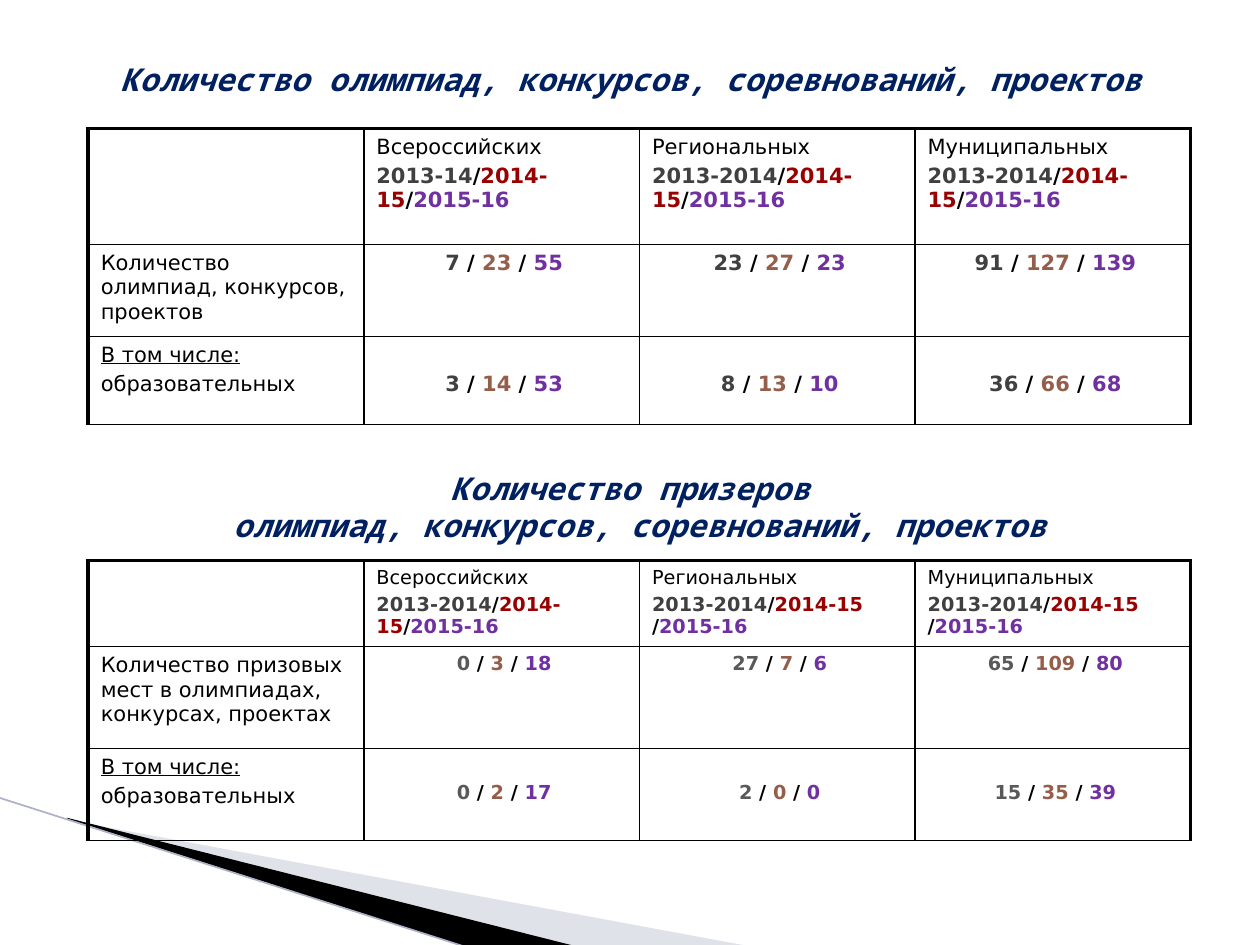
"""Build a slide with two tables of olympiad and prize-winner counts."""
from pptx import Presentation
from pptx.dml.color import RGBColor as RGB
from pptx.enum.shapes import MSO_CONNECTOR as CONN
from pptx.enum.text import MSO_ANCHOR as ANCHOR, PP_ALIGN as ALIGN
from pptx.oxml.ns import qn
from pptx.util import Inches, Pt
from lxml.etree import SubElement

THEME = {
    "head_font": "Noto Sans Mono", "body_font": "DejaVu Sans",
    "head_size": 18, "label_size": 12,
    "navy": "002060", "black": "000000", "year1": "404040", "year2": "990000",
    "value2": "955E4B", "purple": "7030A0", "wedge": "B3B7CB", "edge": "ACB1C6",
    "thick": 2.25, "thin": 1,
}
TITLE = "Количество олимпиад, конкурсов, соревнований, проектов"
SUBTITLE = "Количество призеров \nолимпиад, конкурсов, соревнований, проектов"
LEVELS = ["Всероссийских", "Региональных", "Муниципальных"]
INCLUDING = ("В том числе:", "образовательных")
TABLES = [
    {"top": 1.02, "rows": [0.92, 0.73, 0.7], "size": 12, "value1": "404040", "drop": 0.28,
     "years": [("2013-14", "2014-15", "2015-16")] + [("2013-2014", "2014-15", "2015-16")] * 2,
     "label": "Количество олимпиад, конкурсов, проектов",
     "totals": [(7, 23, 55), (23, 27, 23), (91, 127, 139)],
     "educational": [(3, 14, 53), (8, 13, 10), (36, 66, 68)]},
    {"top": 4.45, "rows": [0.68, 0.81, 0.73], "size": 11, "value1": "595959", "drop": 0.26,
     "years": [("2013-2014", "2014-15", "2015-16")] + [("2013-2014", "2014-15 ", "2015-16")] * 2,
     "label": "Количество призовых мест в олимпиадах, конкурсах, проектах",
     "totals": [(0, 3, 18), (27, 7, 6), (65, 109, 80)],
     "educational": [(0, 2, 17), (2, 0, 0), (15, 35, 39)]},
]
WEDGES = [
    ([(0.55, 6.51), (5.95, 7.51), (4.56, 7.51), (0.55, 6.5)], THEME["wedge"], 40),
    ([(0.53, 6.49), (4.57, 7.51), (3.72, 7.52), (0.54, 6.5)], THEME["black"], 100),
]
LEFT, WIDTH, COLS = 0.7, 8.75, 4


def write(tf, paras, size, font=THEME["body_font"], align=ALIGN.LEFT, italic=False):
    """Fill a text frame with paragraphs of (text, colour, bold, underline) runs."""
    tf.word_wrap = True
    for i, runs in enumerate(paras):
        p = tf.paragraphs[0] if i == 0 else tf.add_paragraph()
        p.alignment = align
        p.space_before = Pt(0.2 * size if i else 0)
        for text, color, bold, underline in runs:
            for n, line in enumerate(text.split("\n")):
                if n:
                    p.add_line_break()
                r = p.add_run()
                r.text = line
                f = r.font
                f.name, f.size, f.bold, f.italic = font, Pt(size), bold, italic
                f.underline = underline
                f.color.rgb = RGB.from_string(color)


def plain(text, underline=False):
    return [(text, THEME["black"], False, underline)]


def series(parts, colors, sep):
    runs = []
    for part, color in zip(parts, colors):
        if runs:
            runs.append((sep, THEME["black"], True, False))
        runs.append((str(part), color, True, False))
    return runs


def heading(tf, text):
    write(tf, [[(text, THEME["navy"], True, False)]], THEME["head_size"],
          font=THEME["head_font"], align=ALIGN.CENTER, italic=True)


def border(cell, row, col):
    tc_pr = cell._tc.get_or_add_tcPr()
    outer = {"lnL": col == 0, "lnR": col == COLS - 1, "lnT": row == 0, "lnB": False}
    for side, is_outer in outer.items():
        ln = SubElement(tc_pr, qn("a:" + side), w=str(Pt(THEME["thick" if is_outer else "thin"])))
        fill = SubElement(ln, qn("a:solidFill"))
        SubElement(fill, qn("a:srgbClr"), val=THEME["black"])


def add_counts(s, data):
    gf = s.shapes.add_table(len(data["rows"]), COLS, Inches(LEFT), Inches(data["top"]),
                            Inches(WIDTH), Inches(sum(data["rows"])))
    table = gf.table
    table.first_row = table.horz_banding = False
    for column in table.columns:
        column.width = Inches(WIDTH / COLS)
    for row, height in zip(table.rows, data["rows"]):
        row.height = Inches(height)
    for r in range(len(data["rows"])):
        for c in range(COLS):
            border(table.cell(r, c), r, c)
            table.cell(r, c).fill.background()

    write(table.cell(1, 0).text_frame, [plain(data["label"])], THEME["label_size"])
    write(table.cell(2, 0).text_frame, [plain(INCLUDING[0], True), plain(INCLUDING[1])],
          THEME["label_size"])
    year_colors = (THEME["year1"], THEME["year2"], THEME["purple"])
    value_colors = (data["value1"], THEME["value2"], THEME["purple"])
    for c, (level, years) in enumerate(zip(LEVELS, data["years"]), 1):
        write(table.cell(0, c).text_frame, [plain(level), series(years, year_colors, "/")],
              data["size"])
        for r, key in enumerate(("totals", "educational"), 1):
            cell = table.cell(r, c)
            cell.margin_left = Inches(0.14)
            write(cell.text_frame, [series(data[key][c - 1], value_colors, " / ")],
                  data["size"], align=ALIGN.CENTER)
        table.cell(2, c).margin_top = Inches(data["drop"])


def add_decor(s):
    for points, color, opacity in WEDGES:
        spots = [(Inches(x), Inches(y)) for x, y in points]
        fb = s.shapes.build_freeform(*spots[0])
        fb.add_line_segments(spots[1:], close=True)
        sp = fb.convert_to_shape()
        sp.shadow.inherit = False
        sp.line.fill.background()
        sp.fill.solid()
        sp.fill.fore_color.rgb = RGB.from_string(color)
        if opacity < 100:
            clr = sp._element.spPr.find(".//" + qn("a:srgbClr"))
            SubElement(clr, qn("a:alpha"), val=str(opacity * 1000))
    line = s.shapes.add_connector(CONN.STRAIGHT, Inches(-0.01), Inches(6.33),
                                  Inches(3.71), Inches(7.52))
    line.line.color.rgb = RGB.from_string(THEME["edge"])
    line.line.width = Pt(0.95)
    SubElement(line._element.spPr, qn("a:effectLst"))


def main():
    prs = Presentation()
    prs.slide_width, prs.slide_height = Inches(10), Inches(7.5)
    s = prs.slides.add_slide(prs.slide_layouts[5])
    add_decor(s)

    title = s.shapes.title
    s.shapes._spTree.append(title._element)
    title.left, title.top, title.width, title.height = map(Inches, (0.63, 0.33, 8.75, 0.6))
    title.text_frame.vertical_anchor = ANCHOR.MIDDLE
    heading(title.text_frame, TITLE)

    add_counts(s, TABLES[0])
    box = s.shapes.add_textbox(*map(Inches, (LEFT, 3.67, WIDTH, 1.01)))
    heading(box.text_frame, SUBTITLE)
    add_counts(s, TABLES[1])
    prs.save("out.pptx")


if __name__ == "__main__":
    main()
